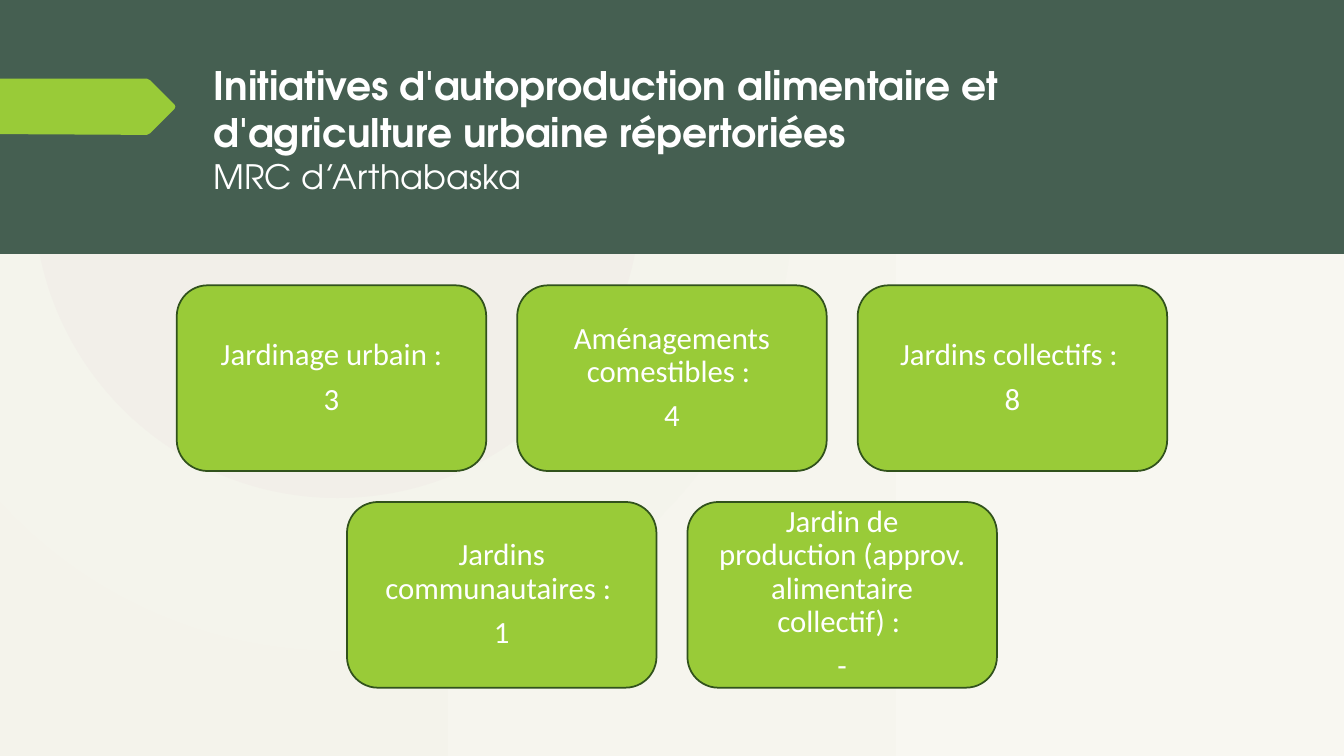
from pptx import Presentation
from pptx.dml.color import RGBColor
from pptx.enum.shapes import MSO_SHAPE
from pptx.enum.text import MSO_ANCHOR, MSO_AUTO_SIZE, PP_ALIGN
from pptx.util import Cm, Pt

RECT, ROUND, OVAL = MSO_SHAPE.RECTANGLE, MSO_SHAPE.ROUNDED_RECTANGLE, MSO_SHAPE.OVAL
TOP, MIDDLE = MSO_ANCHOR.TOP, MSO_ANCHOR.MIDDLE
LEFT, CENTER = PP_ALIGN.LEFT, PP_ALIGN.CENTER
NO_FIT = MSO_AUTO_SIZE.NONE

# Content
HEAD = "Initiatives d'autoproduction alimentaire et d'agriculture urbaine répertoriées "
PLACE = "MRC d’Arthabaska"
ROWS = [
    [("Jardinage urbain :", "3"),
     ("Aménagements comestibles : ", "4"),
     ("Jardins collectifs : ", "8")],
    [("Jardins communautaires : ", "1"),
     ("Jardin de production (approv. alimentaire collectif) : ", "-")],
]

# Look, lengths in cm
GREEN, DARK, EDGE, WHITE = "99CB38", "455F51", "31521C", "FFFFFF"
WIDE, HIGH, BAND = 33.87, 19.05, 6.4
CARD_W, CARD_H, GAP, CARD_TOP = 7.8, 4.68, 0.78, 7.19
RINGS = [(11.5, "F4F4EC"), (7.65, "F2EFE9")]
RING_X, RING_Y = 8.5, 4.9
ARROW = [(0, 1.98), (3.7, 1.98), (3.78, 2.02), (4.4, 2.64), (4.42, 2.69),
         (4.4, 2.74), (3.78, 3.36), (3.7, 3.4), (0, 3.38)]
HEAD_FONT = {"name": "TeX Gyre Adventor", "size": Pt(28), "bold": True}
PLACE_FONT = {"name": "TeX Gyre Adventor", "size": Pt(24), "bold": False}
CARD_FONT = {"name": "Calibri", "size": Pt(22)}
CARD_PARA = {"alignment": CENTER, "line_spacing": 0.9, "space_after": Pt(8)}
HEAD_BOX = {"left": Cm(5.13), "top": Cm(1.42), "width": Cm(26.06), "height": Cm(4.04)}
HEAD_FRAME = {"word_wrap": True, "auto_size": NO_FIT, "vertical_anchor": TOP}
CARD_FRAME = {"word_wrap": True, "vertical_anchor": MIDDLE}
CARD_FRAME.update({f"margin_{side}": Cm(0.46)
                   for side in ("left", "top", "right", "bottom")})


def color(code):
    return RGBColor.from_string(code)


def assign(item, values):
    for key, value in values.items():
        setattr(item, key, value)


def paint(shape, fill, line=None):
    shape.shadow.inherit = False
    shape.fill.solid()
    shape.fill.fore_color.rgb = color(fill)
    if line:
        shape.line.color.rgb = color(line)
        shape.line.width = Pt(1.25)
    else:
        shape.line.fill.background()


def add(kind, x, y, w, h, fill, line=None):
    shape = shapes.add_shape(kind, Cm(x), Cm(y), Cm(w), Cm(h))
    paint(shape, fill, line)
    return shape


def write(para, text, font):
    run = para.add_run()
    run.text = text
    assign(run.font, font)
    run.font.color.rgb = color(WHITE)


deck = Presentation()
deck.slide_width, deck.slide_height = Cm(WIDE), Cm(HIGH)
slide = deck.slides.add_slide(deck.slide_layouts[5])
shapes = slide.shapes

# Background with soft circles
back = slide.background.fill
back.gradient()
back.gradient_angle = 0
for stop, code in zip(back.gradient_stops, ("F4F3EB", "F8F7F1")):
    stop.color.rgb = color(code)
for radius, code in RINGS:
    add(OVAL, RING_X - radius, RING_Y - radius, 2 * radius, 2 * radius, code)

# Band and title, the title in front
add(RECT, 0, 0, WIDE, BAND, DARK)
title = shapes.title
shapes._spTree.append(title._element)
assign(title, HEAD_BOX)
assign(title.text_frame, HEAD_FRAME)
para = title.text_frame.paragraphs[0]
para.alignment = LEFT
write(para, HEAD, HEAD_FONT)
para.add_line_break()
write(para, PLACE, PLACE_FONT)

# Arrow tab
points = [(Cm(x), Cm(y)) for x, y in ARROW]
pen = shapes.build_freeform(*points[0])
pen.add_line_segments(points[1:], close=True)
paint(pen.convert_to_shape(), GREEN)

# Cards, each row centred
for r, row in enumerate(ROWS):
    start = (WIDE - len(row) * (CARD_W + GAP) + GAP) / 2
    for c, texts in enumerate(row):
        card = add(ROUND, start + c * (CARD_W + GAP), CARD_TOP + r * (CARD_H + GAP),
                   CARD_W, CARD_H, GREEN, EDGE)
        frame = card.text_frame
        assign(frame, CARD_FRAME)
        frame.add_paragraph()
        for para, text in zip(frame.paragraphs, texts):
            assign(para, CARD_PARA)
            write(para, text, CARD_FONT)

deck.save("out.pptx")
